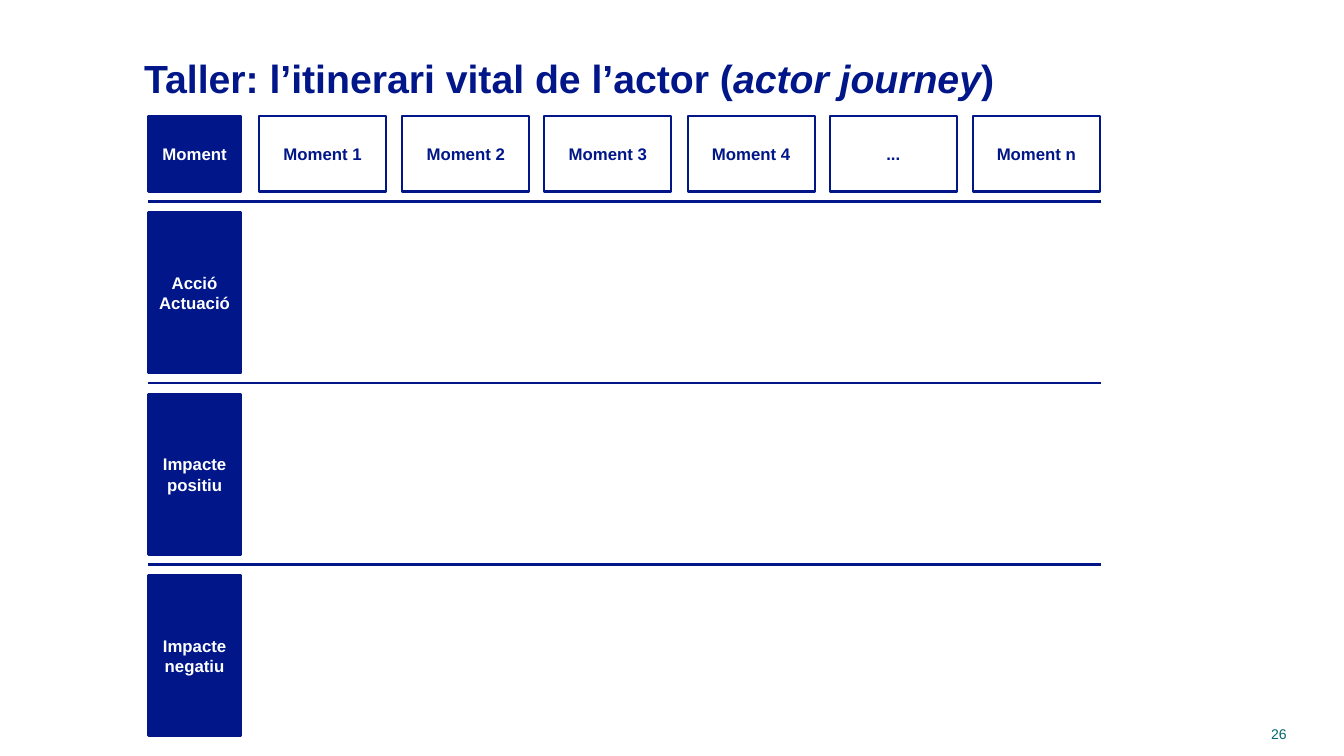
from dataclasses import dataclass

import lxml.etree
import pptx
import pptx.dml.color
import pptx.enum.shapes
import pptx.enum.text
import pptx.oxml.ns
import pptx.util

EMU_PER_PX = 9144
FONT = "Arial"
COLORS = {"navy": "001689", "white": "FFFFFF", "teal": "00676C"}
ALIGN = pptx.enum.text.PP_ALIGN
MIDDLE = pptx.enum.text.MSO_ANCHOR.MIDDLE

GRID_LEFT, GRID_RIGHT = 147, 1092
HEADER_TOP, HEADER_HEIGHT = 115, 75
LABEL_WIDTH = 92
MOMENT_LEFT, LAST_MOMENT_LEFT, MOMENT_WIDTH = 257, 965, 126
ROW_TOP, ROW_PITCH, ROW_HEIGHT = 211, 180, 159
RULE_TOP = 200


@dataclass
class Cell:
    text: str
    left: int
    top: int
    width: int
    height: int
    filled: bool


def px(length: int) -> int:
    return pptx.util.Emu(length * EMU_PER_PX)


def color(name: str) -> pptx.dml.color.RGBColor:
    return pptx.dml.color.RGBColor.from_string(COLORS[name])


def format_text(frame, size: int, color_name: str, align, bold: bool) -> None:
    frame.word_wrap = True
    frame.vertical_anchor = MIDDLE
    for para in frame.paragraphs:
        para.alignment = align
        for span in para.runs:
            span.font.name = FONT
            span.font.size = pptx.util.Pt(size)
            span.font.bold = bold
            span.font.color.rgb = color(color_name)


def draw_cell(page, cell: Cell) -> None:
    box = page.shapes.add_shape(
        pptx.enum.shapes.MSO_SHAPE.RECTANGLE,
        px(cell.left), px(cell.top), px(cell.width), px(cell.height))
    box.shadow.inherit = False
    if cell.filled:
        box.fill.solid()
        box.fill.fore_color.rgb = color("navy")
    else:
        box.fill.background()
    box.line.color.rgb = color("navy")
    box.line.width = pptx.util.Pt(2 if cell.filled else 1.5)
    box.text_frame.text = cell.text
    format_text(box.text_frame, 12, "white" if cell.filled else "navy", ALIGN.CENTER, True)


def draw_rule(page, top: int) -> None:
    rule = page.shapes.add_connector(
        pptx.enum.shapes.MSO_CONNECTOR.STRAIGHT,
        px(GRID_LEFT), px(top), px(GRID_RIGHT), px(top))
    rule.line.color.rgb = color("navy")
    rule.line.width = pptx.util.Pt(2)
    properties = rule.element.find(pptx.oxml.ns.qn("p:spPr"))
    lxml.etree.SubElement(properties, pptx.oxml.ns.qn("a:effectLst"))


def draw_title(page) -> None:
    title = page.shapes.title
    title.left, title.top, title.width, title.height = px(133), px(46), px(895), px(62)
    para = title.text_frame.paragraphs[0]
    for text, italic in (("Taller: l’itinerari vital de l’actor (", False),
                         ("actor journey", True), (")", False)):
        span = para.add_run()
        span.text = text
        span.font.italic = italic
    format_text(title.text_frame, 28, "navy", ALIGN.LEFT, True)


def draw_page_number(page) -> None:
    box = page.shapes.add_textbox(px(1202), px(714), px(84), px(29))
    box.text_frame.text = "26"
    format_text(box.text_frame, 10, "teal", ALIGN.RIGHT, False)


def journey_cells() -> list[Cell]:
    cells = [Cell("Moment", GRID_LEFT, HEADER_TOP, LABEL_WIDTH, HEADER_HEIGHT, True)]
    moments = ("Moment 1", "Moment 2", "Moment 3", "Moment 4", "...", "Moment n")
    for index, text in enumerate(moments):
        left = MOMENT_LEFT + round(index * (LAST_MOMENT_LEFT - MOMENT_LEFT) / (len(moments) - 1))
        cells.append(Cell(text, left, HEADER_TOP, MOMENT_WIDTH, HEADER_HEIGHT, False))
    for index, text in enumerate(("Acció\nActuació", "Impacte positiu", "Impacte negatiu")):
        top = ROW_TOP + index * ROW_PITCH
        cells.append(Cell(text, GRID_LEFT, top, LABEL_WIDTH, ROW_HEIGHT, True))
    return cells


def main() -> None:
    deck = pptx.Presentation()
    deck.slide_width = pptx.util.Inches(13.33)
    deck.slide_height = pptx.util.Inches(7.5)
    page = deck.slides.add_slide(deck.slide_layouts[5])
    draw_title(page)
    for cell in journey_cells():
        draw_cell(page, cell)
    for index in range(3):
        draw_rule(page, RULE_TOP + index * ROW_PITCH)
    draw_page_number(page)
    deck.save("out.pptx")


if __name__ == "__main__":
    main()
